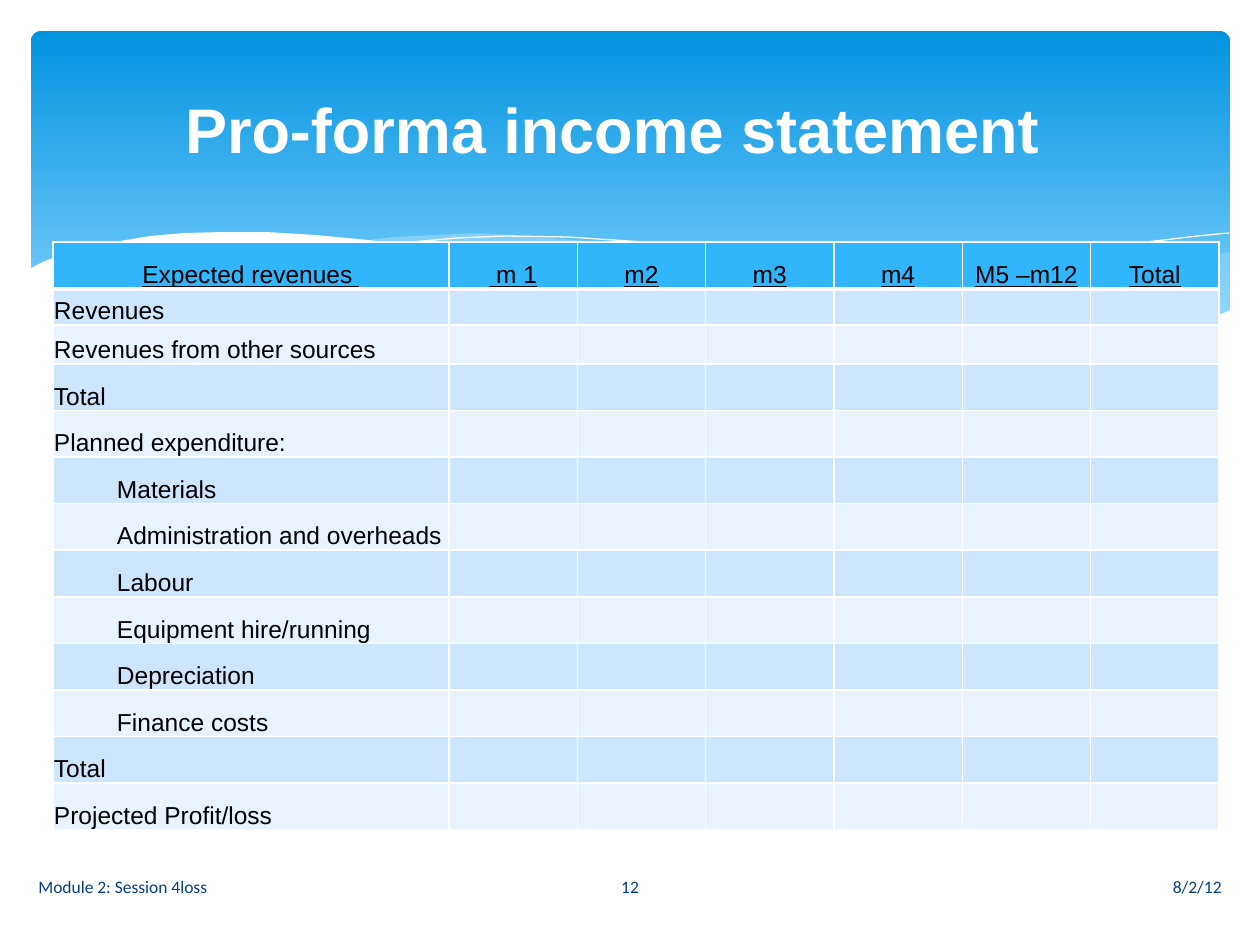
from lxml import etree
from pptx import Presentation, util as u
from pptx.dml.color import RGBColor
from pptx.enum import shapes, text
from pptx.oxml import ns

PX = u.Inches(1) / 126
WHITE, BLACK, NAVY, MIST = "FFFFFF", "000000", "073E87", "C6E7FC"
HEADER, BANDS = "31B6FD", ("CEE5FE", "E8F3FF")

COLUMNS = ["Expected revenues ", " m 1", "m2", "m3", "m4", "M5 –m12", "Total"]
# Row label and whether it is indented
ROWS = [
    ("Revenues", False), ("Revenues from other sources", False), ("Total", False),
    ("Planned expenditure:", False), ("Materials", True),
    ("Administration and overheads", True), ("Labour", True),
    ("Equipment hire/running", True), ("Depreciation", True),
    ("Finance costs", True), ("Total", False), ("Projected Profit/loss", False),
]

# Wave outlines, relative to the top left of the wave band
RIGHT_WAVE = [
    (1201, 20), (1149, 29), (1094, 40), (1056, 49), (985, 67), (920, 81), (861, 92),
    (804, 102), (859, 110), (910, 115), (955, 117), (997, 118), (1047, 116),
    (1091, 111), (1131, 102), (1167, 92), (1201, 79)]
MIDDLE_WAVE = [
    (1096, 112), (1026, 102), (948, 88), (861, 71), (764, 48), (707, 34), (653, 24),
    (604, 15), (557, 9), (500, 4), (450, 1), (404, 3), (365, 5), (331, 9), (402, 19),
    (480, 34), (537, 48), (639, 71), (728, 89), (809, 103), (881, 113), (945, 117),
    (1002, 118), (1051, 117)]
FALLING_LINE = [
    (360, 14), (384, 10), (428, 6), (476, 4), (538, 5), (614, 10), (704, 20),
    (772, 30), (847, 44), (929, 62), (1018, 84), (1114, 111)]
RISING_LINE = [
    (743, 92), (818, 72), (914, 49), (987, 33), (1062, 19), (1118, 10), (1169, 4),
    (1200, 1)]
FRONT_WAVE = [
    (1202, 78), (1168, 91), (1130, 102), (1089, 110), (1042, 115), (990, 117),
    (930, 115), (863, 108), (788, 98), (701, 83), (605, 62), (534, 45), (464, 29),
    (399, 16), (339, 8), (286, 3), (237, 0), (194, 0), (155, 1), (121, 4), (91, 9),
    (67, 14), (37, 21), (16, 29), (0, 37), (0, 183), (1202, 183)]


def px(length):
    return u.Emu(round(length * PX))


def color(hex_string):
    return RGBColor.from_string(hex_string)


def style(para, size, hex_string, name="Arial", bold=False, underline=False):
    font = para.font
    font.size, font.name, font.bold = u.Pt(size), name, bold
    font.underline = underline
    font.color.rgb = color(hex_string)


def add_curve(page, left, top, points, fill=None, opacity=100):
    """Closed and filled when a fill is given, otherwise a white hairline."""
    builder = page.shapes.build_freeform(*points[0], scale=PX)
    builder.add_line_segments(points[1:], close=fill is not None)
    curve = builder.convert_to_shape(px(left), px(top))
    curve.shadow.inherit = False
    if fill is None:
        curve.fill.background()
        curve.line.color.rgb = color(WHITE)
        curve.line.width = 0
        return
    curve.line.fill.background()
    curve.fill.solid()
    curve.fill.fore_color.rgb = color(fill)
    if opacity < 100:
        tone = curve.fill._xPr.find(".//" + ns.qn("a:srgbClr"))
        etree.SubElement(tone, ns.qn("a:alpha"), val=str(opacity * 1000))


def add_banner(page, left, top, width, height):
    banner = page.shapes.add_shape(
        shapes.MSO_SHAPE.ROUNDED_RECTANGLE, px(left), px(top), px(width), px(height))
    banner.adjustments[0] = 0.03
    banner.shadow.inherit = False
    banner.line.fill.background()
    banner.fill.gradient()
    banner.fill.gradient_angle = 270
    stops = [("0293E0", 0), ("83D3FE", 0.9)]
    for stop, (hex_string, position) in zip(banner.fill.gradient_stops, stops):
        stop.color.rgb = color(hex_string)
        stop.position = position


def add_waves(page, left, top):
    add_curve(page, left, top, RIGHT_WAVE, MIST, 29)
    add_curve(page, left, top, MIDDLE_WAVE, MIST, 40)
    add_curve(page, left, top, FALLING_LINE)
    add_curve(page, left, top, RISING_LINE)
    add_curve(page, left, top, FRONT_WAVE, WHITE)


def add_text(page, left, top, width, height, words, align, **font):
    box = page.shapes.add_textbox(px(left), px(top), px(width), px(height))
    frame = box.text_frame
    frame.word_wrap = True
    frame.vertical_anchor = text.MSO_ANCHOR.MIDDLE
    para = frame.paragraphs[0]
    para.text = words
    para.alignment = align
    style(para, **font)
    return frame


def add_title(page, left, top, width, height):
    frame = add_text(page, left, top, width, height, "Pro-forma income statement",
                     text.PP_ALIGN.CENTER, size=36, hex_string=WHITE, bold=True)
    frame.margin_right, frame.margin_bottom = px(48), px(17)


def add_footer(page, left, top, width, height):
    side, middle = 522, 160
    font = dict(size=10, hex_string=NAVY, name="Calibri")
    add_text(page, left, top, side, height, "Module 2: Session 4loss",
             text.PP_ALIGN.LEFT, **font)
    add_text(page, left + (width - middle) / 2, top, middle, height, "12",
             text.PP_ALIGN.CENTER, **font)
    add_text(page, left + width - side, top, side, height, "8/2/12",
             text.PP_ALIGN.RIGHT, **font)


def set_borders(cell, bottom, top):
    props = cell._tc.get_or_add_tcPr()
    for tag, points in (("lnL", 1), ("lnR", 1), ("lnT", top), ("lnB", bottom)):
        line = etree.SubElement(props, ns.qn("a:" + tag), w=str(u.Pt(points)))
        fill = etree.SubElement(line, ns.qn("a:solidFill"))
        etree.SubElement(fill, ns.qn("a:srgbClr"), val=WHITE)


def fill_cell(cell, words, fill, header=False, indented=False, top=1):
    set_borders(cell, bottom=3 if header else 1, top=top)
    cell.fill.solid()
    cell.fill.fore_color.rgb = color(fill)
    cell.vertical_anchor = text.MSO_ANCHOR.BOTTOM
    cell.margin_left = cell.margin_right = cell.margin_top = px(1)
    cell.margin_bottom = 0
    para = cell.text_frame.paragraphs[0]
    if not words:
        etree.SubElement(para._p, ns.qn("a:endParaRPr"), sz="1400")
        return
    para.text = words
    if header:
        para.alignment = text.PP_ALIGN.CENTER
    if indented:
        para.level = 1
        para._p.get_or_add_pPr().set("marL", str(px(63)))
        para._p.get_or_add_pPr().set("indent", "0")
    style(para, 14, BLACK, underline=header)


def add_statement(page, left, top, width, height):
    first_column, first_rows = 396, [47, 36, 39]
    table = page.shapes.add_table(len(ROWS) + 1, len(COLUMNS), px(left), px(top),
                                  px(width), px(height)).table
    month = (width - first_column) / (len(COLUMNS) - 1)
    for index, column in enumerate(table.columns):
        column.width = px(month if index else first_column)
    others = len(ROWS) + 1 - len(first_rows)
    heights = first_rows + [(height - sum(first_rows)) / others] * others
    for row, row_height in zip(table.rows, heights):
        row.height = px(row_height)

    for index, heading in enumerate(COLUMNS):
        fill_cell(table.cell(0, index), heading, HEADER, header=True)
    for number, (label, indented) in enumerate(ROWS):
        for index in range(len(COLUMNS)):
            fill_cell(table.cell(number + 1, index), "" if index else label,
                      BANDS[number % 2], indented=indented,
                      top=1 if number else 3)


def main():
    deck = Presentation()
    deck.slide_width, deck.slide_height = px(1260), px(945)
    page = deck.slides.add_slide(deck.slide_layouts[6])
    add_banner(page, 31, 31, 1199, 340)
    add_waves(page, 29, 232)
    add_statement(page, 53, 242, 1166, 588)
    add_title(page, 63, 47, 1134, 173)
    add_footer(page, 26, 862, 1208, 50)
    deck.save("out.pptx")


if __name__ == "__main__":
    main()
